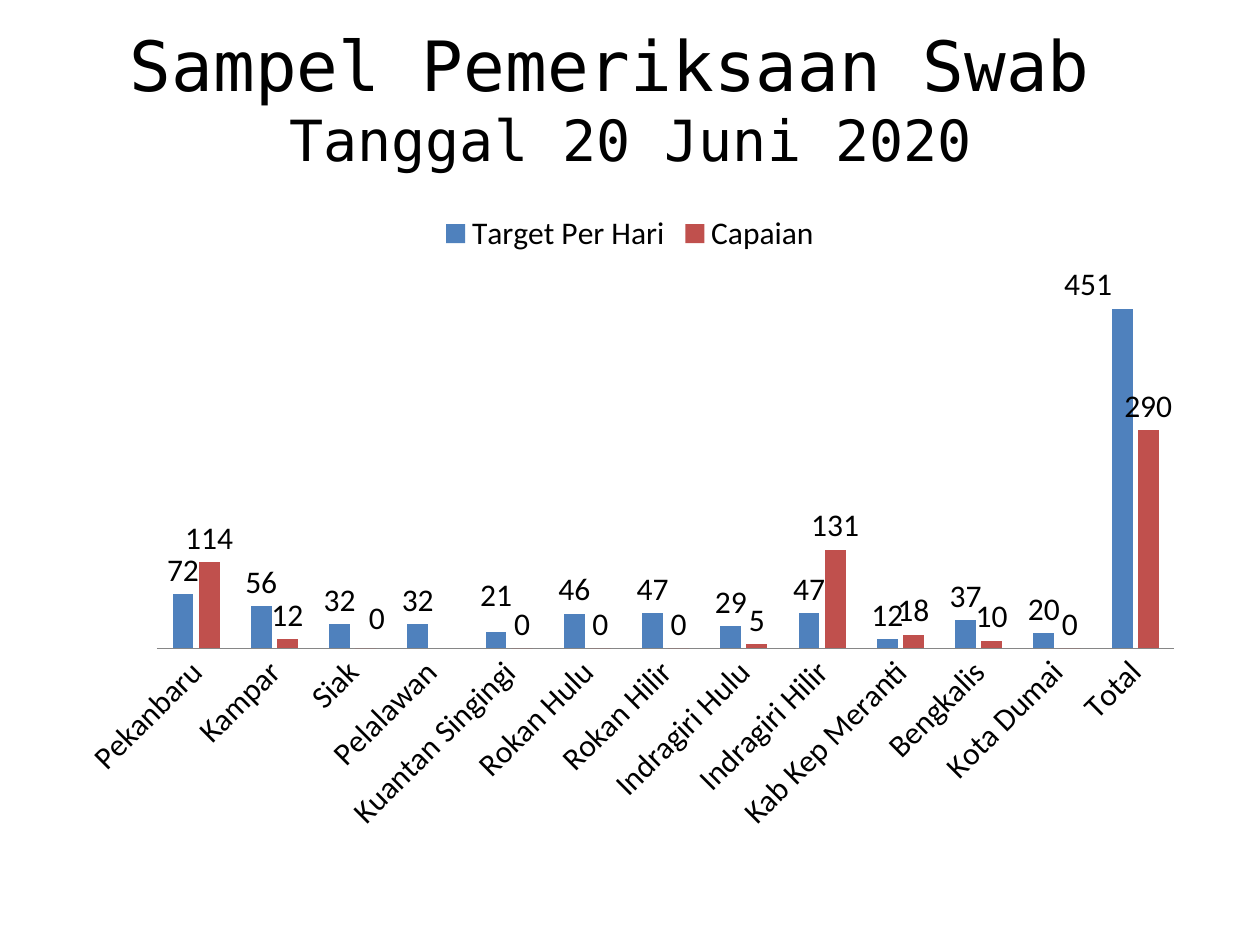
import lxml.etree
import pptx
import pptx.chart.data
import pptx.dml.color
import pptx.enum.chart
import pptx.enum.text
import pptx.oxml.ns
import pptx.util

Inches = pptx.util.Inches
qn = pptx.oxml.ns.qn

# Region: (daily target, samples achieved)
SAMPLES = {
    "Pekanbaru": (72, 114),
    "Kampar": (56, 12),
    "Siak": (32, 0),
    "Pelalawan": (32, None),
    "Kuantan Singingi": (21, 0),
    "Rokan Hulu": (46, 0),
    "Rokan Hilir": (47, 0),
    "Indragiri Hulu": (29, 5),
    "Indragiri Hilir": (47, 131),
    "Kab Kep Meranti": (12, 18),
    "Bengkalis": (37, 10),
    "Kota Dumai": (20, 0),
    "Total": (451, 290),
}
REGIONS = list(SAMPLES)

# Series name, colour, and shifted labels as {region: (x, y) share of the chart}
SERIES = [
    ("Target Per Hari", "4F81BD",
     {"Kuantan Singingi": (0, -0.02), "Total": (-0.03, 0)}),
    ("Capaian", "C0504D", {"Siak": (0.01, -0.01)}),
]

# Title lines with their sizes in points
TITLE_LINES = [("Sampel Pemeriksaan Swab ", 39.6), ("Tanggal 20 Juni 2020", 32.4)]
TITLE_FONT = "DejaVu Sans Mono"
CHART_FONT = "Calibri"
CHART_SIZE = 18
TEXT_COLOR = "000000"
AXIS_COLOR = "868686"
ABOVE_BAR = pptx.enum.chart.XL_LABEL_POSITION.OUTSIDE_END


def rgb(value):
    return pptx.dml.color.RGBColor.from_string(value)


def apply(target, formats):
    for name, value in formats.items():
        setattr(target, name, value)


def style_font(font, name=CHART_FONT, size=CHART_SIZE):
    apply(font, {"name": name, "size": pptx.util.Pt(size)})
    font.color.rgb = rgb(TEXT_COLOR)


def add_title(slide):
    title = slide.shapes.title
    apply(title, {"left": Inches(0.17), "top": Inches(0.3),
                  "width": Inches(9.67), "height": Inches(0.95)})
    apply(title.text_frame, {
        "word_wrap": True,
        "auto_size": pptx.enum.text.MSO_AUTO_SIZE.NONE,
        "vertical_anchor": pptx.enum.text.MSO_ANCHOR.MIDDLE,
    })
    heading = title.text_frame.paragraphs[0]
    heading.alignment = pptx.enum.text.PP_ALIGN.CENTER
    for text, size in TITLE_LINES:
        if heading.runs:
            heading.add_line_break()
        line = heading.add_run()
        line.text = text
        style_font(line.font, TITLE_FONT, size)


def shift_labels(series, offsets):
    """Move single data labels away from their usual place above the bar."""
    for region in offsets:
        label = series.points[REGIONS.index(region)].data_label
        style_font(label.font)
        label.position = ABOVE_BAR
    # The offset itself goes into a manual layout, right after the label's index
    for label_xml in series._element.iter(qn("c:dLbl")):
        index = label_xml.find(qn("c:idx"))
        region = REGIONS[int(index.get("val"))]
        layout = lxml.etree.Element(qn("c:layout"))
        manual = lxml.etree.SubElement(layout, qn("c:manualLayout"))
        for axis, share in zip("xy", offsets[region]):
            lxml.etree.SubElement(manual, qn(f"c:{axis}"), val=str(share))
        index.addnext(layout)
    # A shifted label needs no line back to its bar
    for leader in series._element.iter(qn("c:showLeaderLines")):
        leader.set("val", "0")


def style_series(series, color, offsets):
    series.format.fill.solid()
    series.format.fill.fore_color.rgb = rgb(color)
    series.invert_if_negative = False
    apply(series.data_labels, {"show_value": True, "position": ABOVE_BAR})
    style_font(series.data_labels.font)
    shift_labels(series, offsets)


def style_axes(chart):
    no_tick = pptx.enum.chart.XL_TICK_MARK.NONE
    region_axis = chart.category_axis
    apply(region_axis, {"major_tick_mark": no_tick, "minor_tick_mark": no_tick,
                        "has_major_gridlines": False})
    region_axis.format.line.color.rgb = rgb(AXIS_COLOR)
    style_font(region_axis.tick_labels.font)
    # Slant the region names upwards by 45 degrees (60000 units each)
    text_body = region_axis._element.find(".//" + qn("a:bodyPr"))
    text_body.set("rot", str(-45 * 60000))
    apply(chart.value_axis, {"visible": False, "has_major_gridlines": False,
                             "minimum_scale": 0, "maximum_scale": 500})


def add_swab_chart(slide):
    # Data: one series per column of SAMPLES
    samples = pptx.chart.data.CategoryChartData()
    samples.categories = REGIONS
    for (name, _, _), values in zip(SERIES, zip(*SAMPLES.values())):
        samples.add_series(name, values)
    chart = slide.shapes.add_chart(
        pptx.enum.chart.XL_CHART_TYPE.COLUMN_CLUSTERED,
        Inches(0.5), Inches(1.58), Inches(9), Inches(5.12), samples).chart
    apply(chart, {"has_title": False, "has_legend": True})
    style_font(chart.font)

    # Legend
    apply(chart.legend, {
        "position": pptx.enum.chart.XL_LEGEND_POSITION.TOP,
        "include_in_layout": False,
    })
    style_font(chart.legend.font)

    # Bars and axes
    bars = chart.plots[0]
    apply(bars, {"gap_width": 150, "overlap": -25, "vary_by_categories": False})
    for series, (_, color, offsets) in zip(bars.series, SERIES):
        style_series(series, color, offsets)
    style_axes(chart)


def main():
    deck = pptx.Presentation()
    apply(deck, {"slide_width": Inches(10), "slide_height": Inches(7.5)})
    slide = deck.slides.add_slide(deck.slide_layouts[5])  # title only
    add_title(slide)
    add_swab_chart(slide)
    deck.save("out.pptx")


if __name__ == "__main__":
    main()
